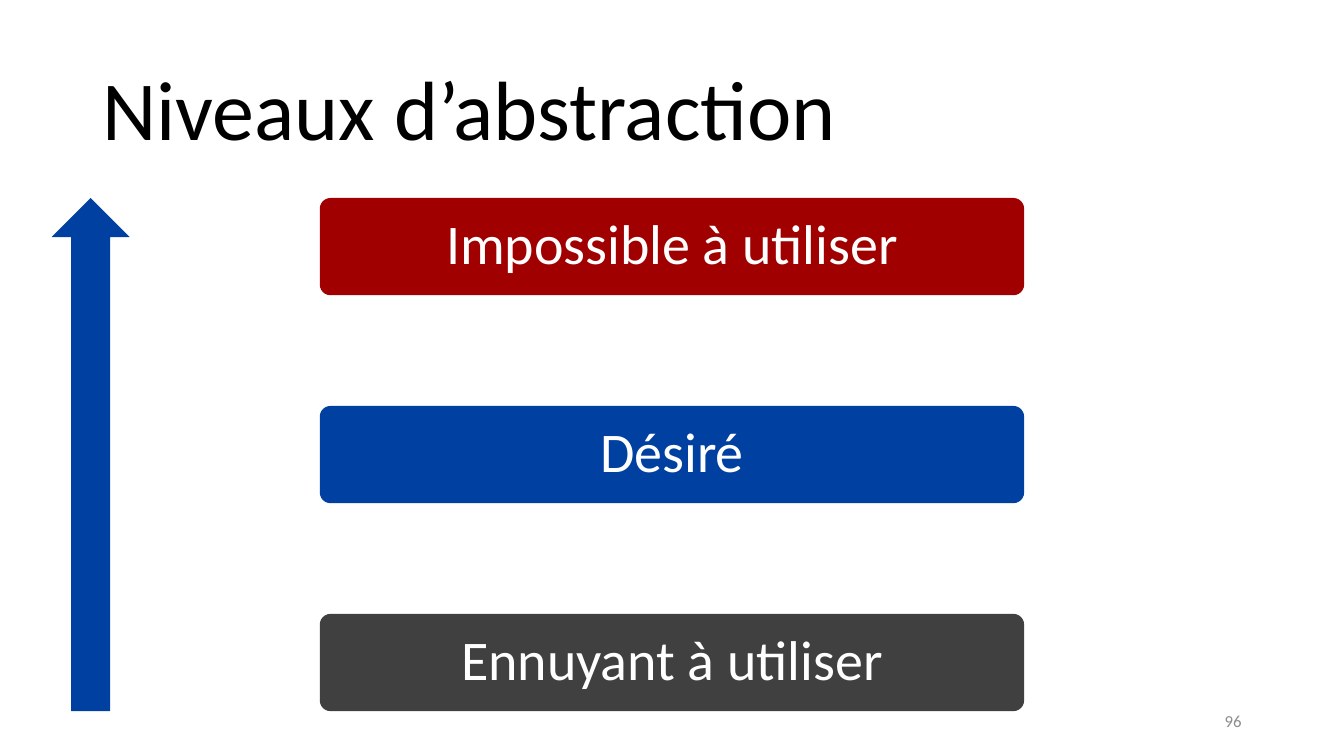
from pptx import Presentation
from pptx.dml.color import RGBColor
from pptx.enum.shapes import MSO_SHAPE
from pptx.enum.text import MSO_ANCHOR, PP_ALIGN
from pptx.util import Cm, Pt

BLACK = RGBColor(0x00, 0x00, 0x00)
WHITE = RGBColor(0xFF, 0xFF, 0xFF)
GREY = RGBColor(0x8C, 0x8C, 0x8C)
RED = RGBColor(0xA0, 0x00, 0x00)
BLUE = RGBColor(0x00, 0x40, 0xA0)
CHARCOAL = RGBColor(0x40, 0x40, 0x40)

TITLE = "Niveaux d’abstraction"
PAGE_NUMBER = "96"
LEVELS = [
    ("Impossible à utiliser", RED),
    ("Désiré", BLUE),
    ("Ennuyant à utiliser", CHARCOAL),
]

LEVEL_LEFT, LEVEL_WIDTH, LEVEL_HEIGHT = Cm(8.06), Cm(17.75), Cm(2.45)
LEVELS_TOP, LEVEL_STEP = Cm(4.99), Cm(5.24)
ARROW_LEFT, ARROW_WIDTH = Cm(1.3), Cm(1.97)
ARROW_HEIGHT = LEVEL_STEP * (len(LEVELS) - 1) + LEVEL_HEIGHT


def write(holder, text, size, color, align=PP_ALIGN.LEFT, line_spacing=1.0, inset=None):
    frame = holder.text_frame
    frame.word_wrap = True
    frame.vertical_anchor = MSO_ANCHOR.MIDDLE
    if inset is not None:
        frame.margin_left = frame.margin_right = inset
        frame.margin_top = frame.margin_bottom = inset
    paragraph = frame.paragraphs[0]
    paragraph.alignment = align
    paragraph.line_spacing = line_spacing
    run = paragraph.add_run()
    run.text = text
    run.font.name = "Calibri"
    run.font.size = Pt(size)
    run.font.color.rgb = color


def add_filled(slide, preset, left, top, width, height, color):
    shape = slide.shapes.add_shape(preset, left, top, width, height)
    shape.shadow.inherit = False
    shape.fill.solid()
    shape.fill.fore_color.rgb = color
    shape.line.fill.background()
    return shape


def main():
    presentation = Presentation()
    presentation.slide_width, presentation.slide_height = Cm(33.87), Cm(19.05)
    slide = presentation.slides.add_slide(presentation.slide_layouts[6])

    title = slide.shapes.add_textbox(Cm(2.33), Cm(1.01), Cm(29.21), Cm(3.68))
    write(title, TITLE, 60, BLACK, line_spacing=0.9)
    page_number = slide.shapes.add_textbox(Cm(23.92), Cm(17.66), Cm(7.62), Cm(1.01))
    write(page_number, PAGE_NUMBER, 12, GREY, align=PP_ALIGN.RIGHT)

    for row, (label, color) in enumerate(LEVELS):
        level = add_filled(slide, MSO_SHAPE.ROUNDED_RECTANGLE, LEVEL_LEFT,
                           LEVELS_TOP + row * LEVEL_STEP, LEVEL_WIDTH, LEVEL_HEIGHT, color)
        level.adjustments[0] = 0.11
        write(level, label, 40, WHITE, align=PP_ALIGN.CENTER, line_spacing=0.9, inset=Cm(0.48))

    add_filled(slide, MSO_SHAPE.UP_ARROW, ARROW_LEFT, LEVELS_TOP,
               ARROW_WIDTH, ARROW_HEIGHT, BLUE)

    presentation.save("out.pptx")


if __name__ == "__main__":
    main()
